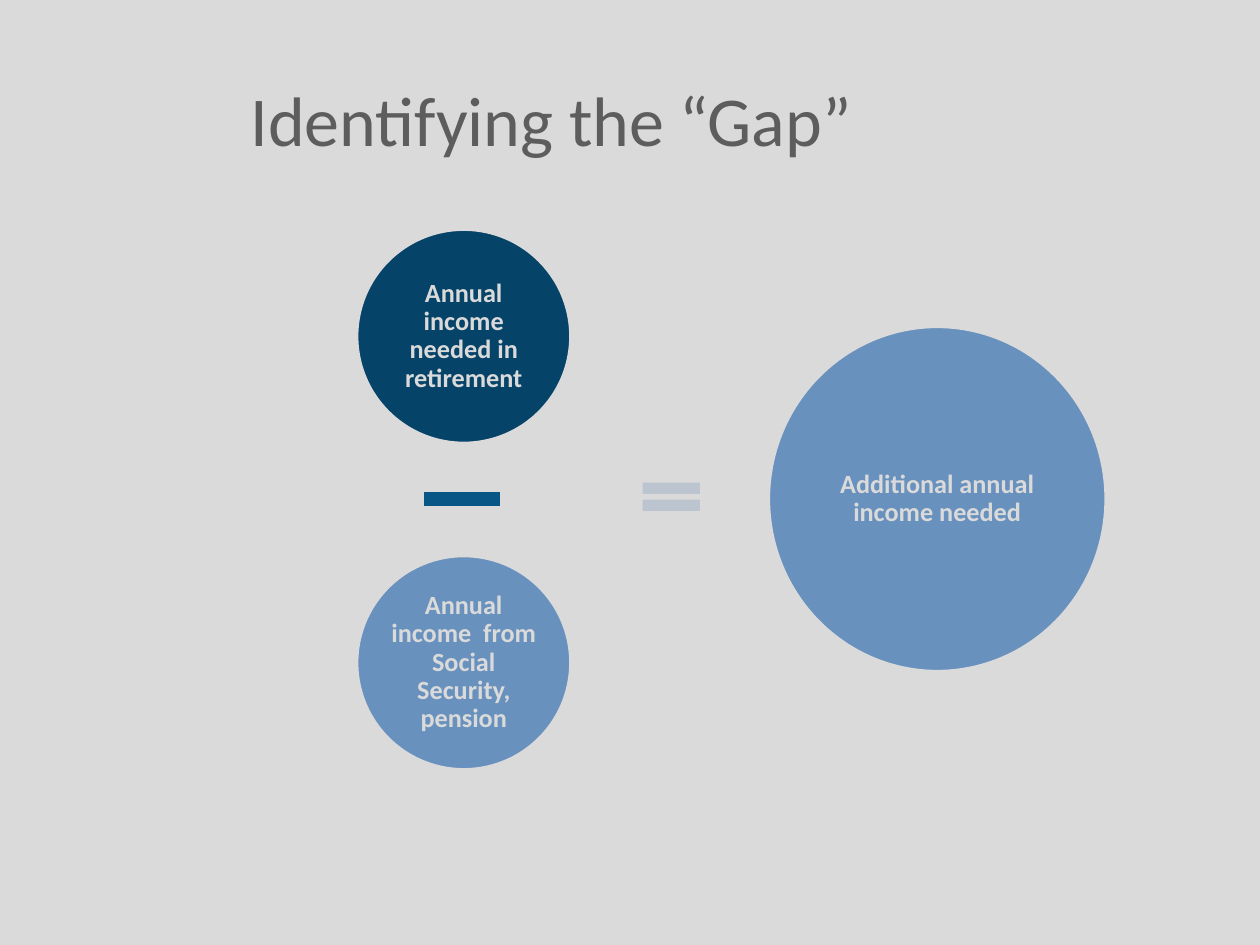
from dataclasses import dataclass

from pptx import Presentation
from pptx.dml.color import RGBColor
from pptx.enum.shapes import MSO_SHAPE as Preset
from pptx.enum.text import MSO_ANCHOR as Anchor, PP_ALIGN as Align
from pptx.util import Cm, Pt


@dataclass(frozen=True)
class Theme:
    background: str = "DADADA"
    title: str = "5D5D5D"
    need: str = "064368"
    amount: str = "6891BE"
    minus: str = "085686"
    equals: str = "BCC4D0"
    font: str = "Calibri"
    title_size: int = 40
    label_size: int = 15


theme = Theme()


def write_text(shape, text, *, size, color, bold=False, align=Align.LEFT,
               spacing=1.0, inset_x=0.25, inset_y=0.13):
    frame = shape.text_frame
    frame.word_wrap = True
    frame.vertical_anchor = Anchor.MIDDLE
    frame.margin_left = frame.margin_right = Cm(inset_x)
    frame.margin_top = frame.margin_bottom = Cm(inset_y)
    paragraph = frame.paragraphs[0]
    paragraph.alignment = align
    paragraph.line_spacing = spacing
    run = paragraph.add_run()
    run.text = text
    run.font.name = theme.font
    run.font.size = Pt(size)
    run.font.bold = bold
    run.font.color.rgb = RGBColor.from_string(color)


def add_filled(slide, preset, box, color):
    shape = slide.shapes.add_shape(preset, *map(Cm, box))
    shape.shadow.inherit = False
    shape.fill.solid()
    shape.fill.fore_color.rgb = RGBColor.from_string(color)
    shape.line.fill.background()
    return shape


presentation = Presentation()
presentation.slide_width = Cm(25.4)
presentation.slide_height = Cm(19.05)
slide = presentation.slides.add_slide(presentation.slide_layouts[6])
slide.background.fill.solid()
slide.background.fill.fore_color.rgb = RGBColor.from_string(theme.background)

# Title
title = slide.shapes.add_textbox(Cm(4.8), Cm(1.47), Cm(14.12), Cm(1.83))
write_text(title, "Identifying the “Gap”", size=theme.title_size, color=theme.title)

# Circles: need, income and the resulting gap
circles = [
    ((7.19, 4.62, 4.32, 4.32), theme.need, "Annual income needed in retirement"),
    ((7.19, 11.2, 4.32, 4.32), theme.amount,
     "Annual income  from Social Security, pension"),
    ((15.49, 6.58, 6.81, 6.96), theme.amount, "Additional annual income needed"),
]
for box, color, label in circles:
    circle = add_filled(slide, Preset.OVAL, box, color)
    circle.line.color.rgb = RGBColor.from_string(theme.background)
    circle.line.width = Pt(2)
    write_text(circle, label, size=theme.label_size, color=theme.background,
               bold=True, align=Align.CENTER, spacing=0.9,
               inset_x=0.05, inset_y=0.05)

# Operators between the circles
add_filled(slide, Preset.MATH_MINUS, (8.28, 9.47, 2.08, 1.17), theme.minus)
add_filled(slide, Preset.MATH_EQUAL, (12.75, 9.53, 1.57, 0.97), theme.equals)

presentation.save("out.pptx")
